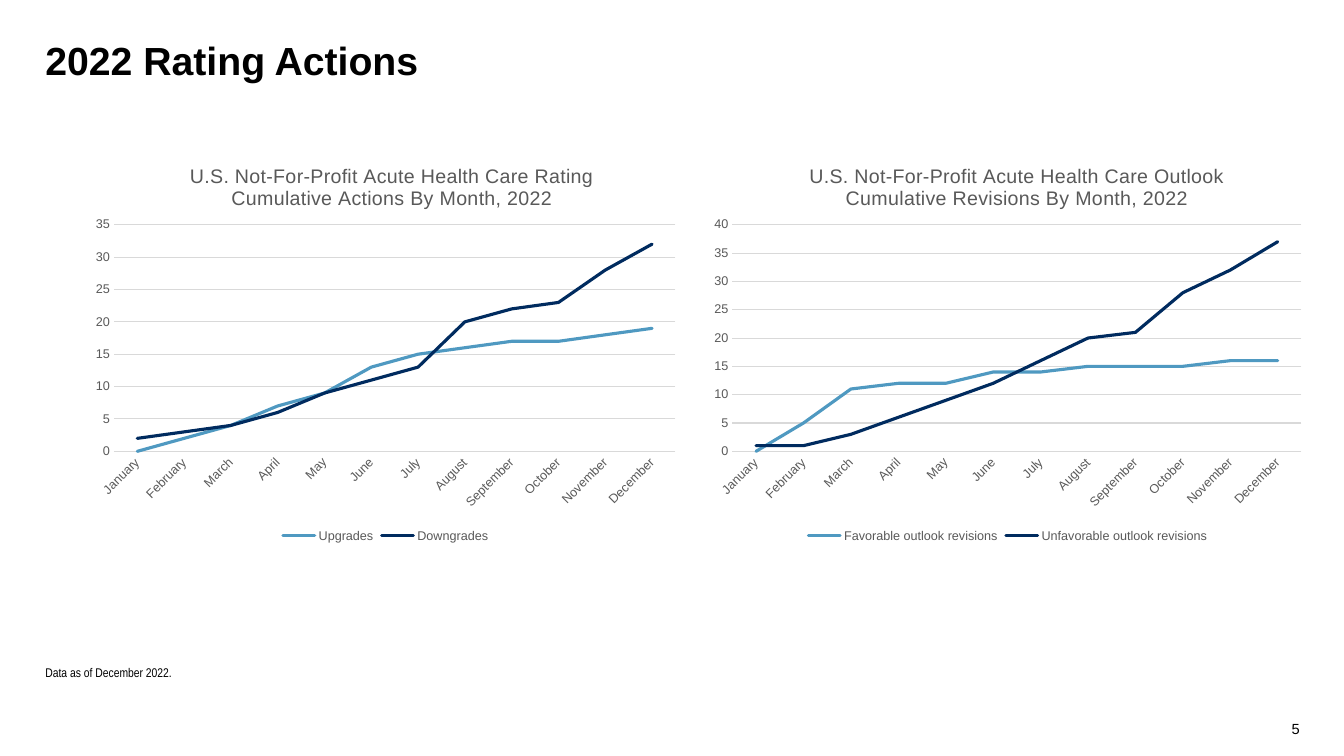
from lxml import etree
from pptx import Presentation
from pptx.chart.data import CategoryChartData
from pptx.dml.color import RGBColor
from pptx.enum.chart import XL_CHART_TYPE as ChartType
from pptx.enum.chart import XL_LEGEND_POSITION as LegendPosition
from pptx.enum.chart import XL_TICK_MARK as TickMark
from pptx.enum.text import MSO_ANCHOR as Anchor
from pptx.enum.text import PP_ALIGN as Align
from pptx.oxml import parse_xml
from pptx.oxml.ns import nsdecls, qn
from pptx.util import Inches, Pt

BLACK, GREY, RULE = "000000", "595959", "D9D9D9"
SERIES_COLORS = ("4F99C1", "002B5F")
MARGIN, CONTENT_WIDTH = 0.45, 12.42
CHART_TOP, CHART_HEIGHT = 1.4, 4.03
MONTHS = ("January", "February", "March", "April", "May", "June", "July",
          "August", "September", "October", "November", "December")
RATING_ACTIONS = {
    "Upgrades": (0, 2, 4, 7, 9, 13, 15, 16, 17, 17, 18, 19),
    "Downgrades": (2, 3, 4, 6, 9, 11, 13, 20, 22, 23, 28, 32),
}
OUTLOOK_REVISIONS = {
    "Favorable outlook revisions": (0, 5, 11, 12, 12, 14, 14, 15, 15, 15, 16, 16),
    "Unfavorable outlook revisions": (1, 1, 3, 6, 9, 12, 16, 20, 21, 28, 32, 37),
}


def color(value):
    return RGBColor.from_string(value)


def style_font(font, size, value=BLACK, name="Arial", bold=False):
    font.size, font.name, font.bold = Pt(size), name, bold
    font.color.rgb = color(value)


def style_line(line, value, width):
    line.color.rgb = color(value)
    line.width = Pt(width)


def add_text(slide, box, text, size, insets, anchor, align=Align.LEFT,
             spacing=1.0, **font_style):
    shape = slide.shapes.add_textbox(*map(Inches, box))
    frame = shape.text_frame
    frame.word_wrap = True
    frame.vertical_anchor = anchor
    (frame.margin_left, frame.margin_top,
     frame.margin_right, frame.margin_bottom) = map(Inches, insets)
    frame.text = text
    paragraph = frame.paragraphs[0]
    paragraph.alignment = align
    paragraph.line_spacing = spacing
    style_font(paragraph.runs[0].font, size, **font_style)


def manual_layout(target="", **shares):
    """Chart layout with positions given as shares of the chart's size."""
    modes = "".join(f'<c:{side}Mode val="edge"/>' for side in "xy")
    sizes = "".join(f'<c:{key} val="{share}"/>' for key, share in shares.items())
    return parse_xml(f'<c:layout {nsdecls("c")}><c:manualLayout>'
                     f'{target}{modes}{sizes}</c:manualLayout></c:layout>')


def add_chart_title(chart, text):
    frame = chart.chart_title.text_frame
    frame.text = text
    run = frame.paragraphs[0].runs[0]
    style_font(run.font, 14, GREY)
    run.font._element.set("spc", "10")
    title = chart._chartSpace.chart.find(qn("c:title"))
    for layout in title.findall(qn("c:layout")):
        title.remove(layout)
    title.find(qn("c:tx")).addnext(manual_layout(x=0.17, y=0.045))
    chart.chart_title.include_in_layout = False


def style_axes(chart, maximum):
    months, values = chart.category_axis, chart.value_axis
    for axis in (months, values):
        axis.major_tick_mark = axis.minor_tick_mark = TickMark.NONE
        style_font(axis.tick_labels.font, 9, GREY)
    style_line(months.format.line, RULE, 0.75)
    months._element.find(qn("c:txPr")).find(qn("a:bodyPr")).set("rot", "-2700000")
    values.minimum_scale, values.maximum_scale = 0, maximum
    values.major_unit = 5
    values.format.line.fill.background()
    style_line(values.major_gridlines.format.line, RULE, 0.75)


def add_line_chart(slide, left, width, title, actions, maximum):
    data = CategoryChartData()
    data.categories = MONTHS
    for name, counts in actions.items():
        data.add_series(name, counts)
    box = map(Inches, (left, CHART_TOP, width, CHART_HEIGHT))
    chart = slide.shapes.add_chart(ChartType.LINE, *box, data).chart
    style_font(chart.font, 10)
    add_chart_title(chart, title)
    style_axes(chart, maximum)

    # Plot area
    plot_area = chart._chartSpace.chart.plotArea
    for layout in plot_area.findall(qn("c:layout")):
        plot_area.remove(layout)
    inner = '<c:layoutTarget val="inner"/>'
    plot_area.insert(0, manual_layout(inner, x=0.05, y=0.206, w=0.93, h=0.558))

    # Series lines
    chart.plots[0].vary_by_categories = False
    for series, value in zip(chart.plots[0].series, SERIES_COLORS):
        series.smooth = False
        line = series.format.line
        style_line(line, value, 2.25)
        outline = series._element.find(qn("c:spPr")).find(qn("a:ln"))
        outline.set("cap", "rnd")
        etree.SubElement(outline, qn("a:round"))

    # Legend
    chart.has_legend = True
    chart.legend.position = LegendPosition.BOTTOM
    chart.legend.include_in_layout = False
    style_font(chart.legend.font, 9, GREY)


def main():
    presentation = Presentation()
    presentation.slide_width = Inches(13.33)
    presentation.slide_height = Inches(7.5)
    slide = presentation.slides.add_slide(presentation.slide_layouts[6])

    # Heading, page number and footnote
    add_text(slide, (MARGIN, 0.15, CONTENT_WIDTH, 0.95), "2022 Rating Actions",
             28, (0, 0.05, 0.1, 0.05), Anchor.MIDDLE, spacing=0.9, bold=True)
    add_text(slide, (12.27, 6.91, 0.62, 0.41), "5", 10.5, (0.1, 0, 0, 0),
             Anchor.BOTTOM, Align.RIGHT)
    add_text(slide, (MARGIN, 6.51, CONTENT_WIDTH, 0.23),
             "Data as of December 2022.", 9, (0, 0, 0.1, 0), Anchor.BOTTOM,
             spacing=0.7, name="Arial Narrow")

    # Charts
    add_line_chart(slide, 0.83, 5.99,
                   "U.S. Not-For-Profit Acute Health Care Rating "
                   "Cumulative Actions By Month, 2022", RATING_ACTIONS, 35)
    add_line_chart(slide, 6.96, 6.07,
                   "U.S. Not-For-Profit Acute Health Care Outlook "
                   "Cumulative Revisions By Month, 2022", OUTLOOK_REVISIONS, 40)
    presentation.save("out.pptx")


if __name__ == "__main__":
    main()
